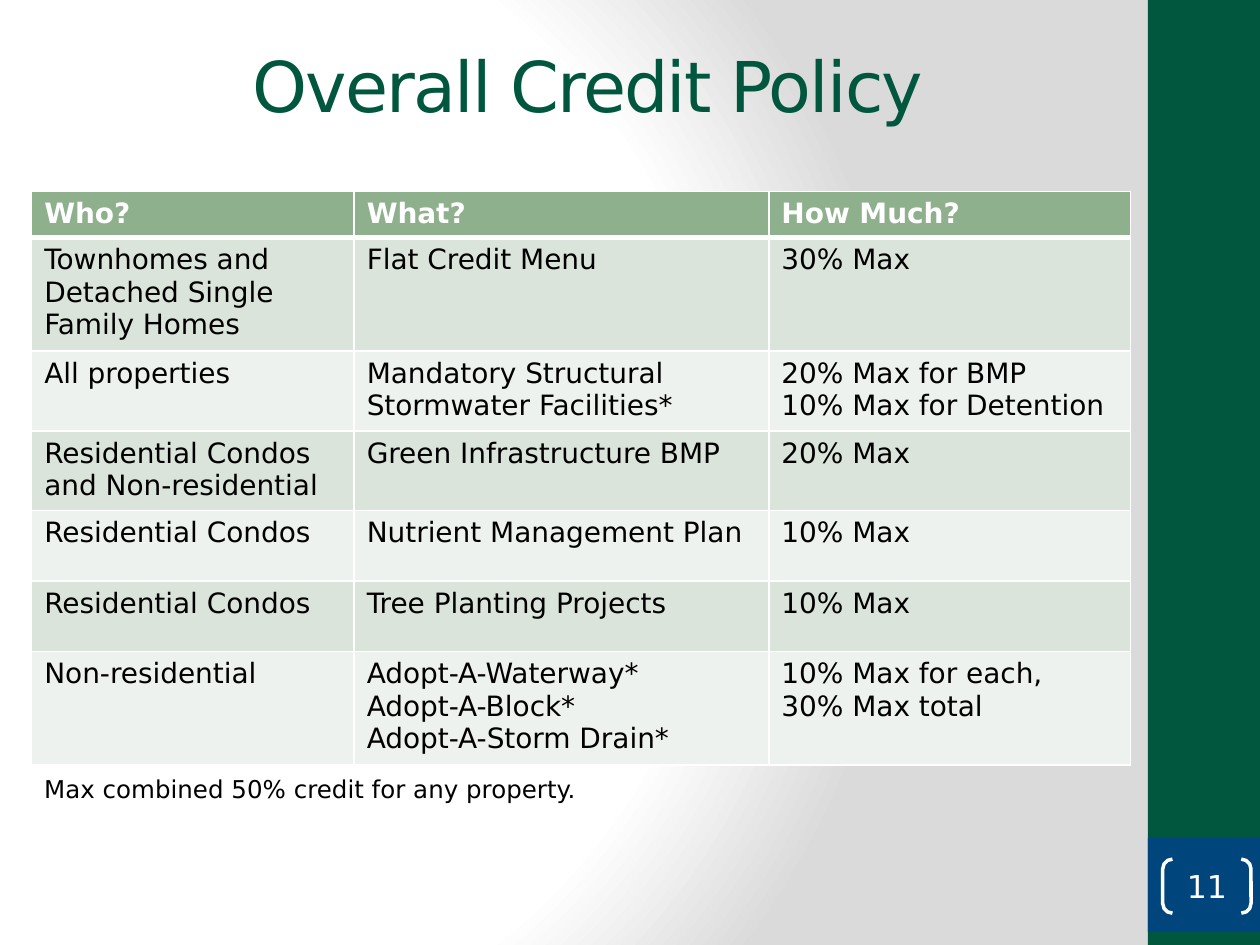
from pptx import Presentation
from pptx.dml.color import RGBColor
from pptx.enum.shapes import MSO_SHAPE
from pptx.enum.text import MSO_ANCHOR, PP_ALIGN
from pptx.oxml import parse_xml
from pptx.oxml.ns import nsdecls
from pptx.util import Cm, Pt

FONT = "DejaVu Sans"
GREEN = RGBColor(0x01, 0x57, 0x3E)
BLUE = RGBColor(0x00, 0x45, 0x7C)
WHITE = RGBColor(0xFF, 0xFF, 0xFF)
BLACK = RGBColor(0x00, 0x00, 0x00)
GREY = RGBColor(0xDA, 0xDA, 0xDA)
HEADER_GREEN = RGBColor(0x8F, 0xB0, 0x8C)
BANDS = (RGBColor(0xDB, 0xE4, 0xDA), RGBColor(0xEE, 0xF2, 0xEE))

CREDITS = [
    ("Who?", "What?", "How Much?"),
    ("Townhomes and Detached Single Family Homes", "Flat Credit Menu", "30% Max"),
    ("All properties", "Mandatory Structural Stormwater Facilities*",
     "20% Max for BMP\n10% Max for Detention"),
    ("Residential Condos and Non-residential", "Green Infrastructure BMP", "20% Max"),
    ("Residential Condos", "Nutrient Management Plan", "10% Max"),
    ("Residential Condos", "Tree Planting Projects", "10% Max"),
    ("Non-residential", "Adopt-A-Waterway*\nAdopt-A-Block*\nAdopt-A-Storm Drain*",
     "10% Max for each,\n30% Max total"),
]
COLUMN_WIDTHS = (6.5, 8.36, 7.29)
ROW_HEIGHTS = (0.84, 1.42, 1.42, 1.42, 1.42, 1.42, 2.03)


def style_text(frame, size, color, bold=False, align=PP_ALIGN.LEFT):
    for paragraph in frame.paragraphs:
        paragraph.alignment = align
        for run in paragraph.runs:
            run.font.name = FONT
            run.font.size = Pt(size)
            run.font.bold = bold
            run.font.color.rgb = color


def paint_background(slide):
    """Radial gradient, white in the middle and grey towards the right."""
    stops = "".join(
        f'<a:gs pos="{position * 1000}"><a:srgbClr val="{color}"/></a:gs>'
        for position, color in ((0, WHITE), (75, WHITE), (100, GREY)))
    slide.element.cSld.insert(0, parse_xml(
        f'<p:bg {nsdecls("p", "a")}><p:bgPr><a:gradFill rotWithShape="1">'
        f'<a:gsLst>{stops}</a:gsLst><a:path path="circle">'
        '<a:fillToRect l="20000" t="50000" r="100000" b="50000"/></a:path>'
        '</a:gradFill><a:effectLst/></p:bgPr></p:bg>'))


def add_panel(slide, left, top, width, height, color):
    panel = slide.shapes.add_shape(
        MSO_SHAPE.RECTANGLE, Cm(left), Cm(top), Cm(width), Cm(height))
    panel.shadow.inherit = False
    panel.fill.solid()
    panel.fill.fore_color.rgb = color
    panel.line.fill.background()


def add_sidebar(slide, left, top, width, height, number):
    add_panel(slide, left, top, width, height, GREEN)
    add_panel(slide, left, top + 16.89, width, 1.9, BLUE)
    brackets = slide.shapes.add_shape(
        MSO_SHAPE.DOUBLE_BRACKET, Cm(left + 0.3), Cm(top + 17.32), Cm(1.78), Cm(1.09))
    brackets.adjustments[0] = 0.18
    brackets.shadow.inherit = False
    brackets.fill.background()
    brackets.line.color.rgb = WHITE
    brackets.line.width = Pt(2)
    frame = brackets.text_frame
    frame.margin_left = frame.margin_top = frame.margin_right = frame.margin_bottom = 0
    frame.vertical_anchor = MSO_ANCHOR.MIDDLE
    frame.text = number
    style_text(frame, 18, WHITE, align=PP_ALIGN.CENTER)


def place_title(slide, left, top, width, height, wording):
    title = slide.shapes.title
    title.left, title.top, title.width, title.height = (
        Cm(left), Cm(top), Cm(width), Cm(height))
    frame = title.text_frame
    frame.text = wording
    frame.vertical_anchor = MSO_ANCHOR.MIDDLE
    style_text(frame, 40, GREEN, align=PP_ALIGN.CENTER)
    frame.paragraphs[0].runs[0].font._element.set("spc", "-100")


def add_borders(cell, widths):
    """Draw white borders; widths maps a side (L, R, T, B) to points."""
    properties = cell._tc.get_or_add_tcPr()
    for side, points in widths.items():
        properties.append(parse_xml(
            f'<a:ln{side} {nsdecls("a")} w="{Pt(points)}"><a:solidFill>'
            f'<a:srgbClr val="{WHITE}"/></a:solidFill></a:ln{side}>'))


def add_credit_table(slide, left, top, width, height):
    holder = slide.shapes.add_table(
        len(CREDITS), len(COLUMN_WIDTHS), Cm(left), Cm(top), Cm(width), Cm(height))
    table = holder.table
    for column, column_width in zip(table.columns, COLUMN_WIDTHS):
        column.width = Cm(column_width)
    for row, row_height in zip(table.rows, ROW_HEIGHTS):
        row.height = Cm(row_height)
    holder.height = Cm(height)
    for r, entries in enumerate(CREDITS):
        header = r == 0
        for c, entry in enumerate(entries):
            cell = table.cell(r, c)
            add_borders(cell, {"L": 1, "R": 1, "T": 3 if r == 1 else 1,
                               "B": 3 if header else 1})
            cell.fill.solid()
            cell.fill.fore_color.rgb = HEADER_GREEN if header else BANDS[(r - 1) % 2]
            cell.text_frame.text = entry
            style_text(cell.text_frame, 16, WHITE if header else BLACK, bold=header)


def add_footnote(slide, left, top, width, height, wording):
    footnote = slide.shapes.add_textbox(Cm(left), Cm(top), Cm(width), Cm(height))
    footnote.text_frame.word_wrap = True
    footnote.text_frame.text = wording
    style_text(footnote.text_frame, 14, BLACK)


def main():
    presentation = Presentation()
    presentation.slide_width, presentation.slide_height = Cm(25.4), Cm(19.05)
    slide = presentation.slides.add_slide(presentation.slide_layouts[5])
    paint_background(slide)
    add_sidebar(slide, 23.14, 0, 2.26, 19.05, "11")
    place_title(slide, 1.27, 0.76, 21.16, 1.9, "Overall Credit Policy")
    add_footnote(slide, 0.64, 15.47, 22.15, 0.86,
                 "Max combined 50% credit for any property.")
    add_credit_table(slide, 0.64, 3.86, 22.15, 11.58)
    presentation.save("out.pptx")


if __name__ == "__main__":
    main()
